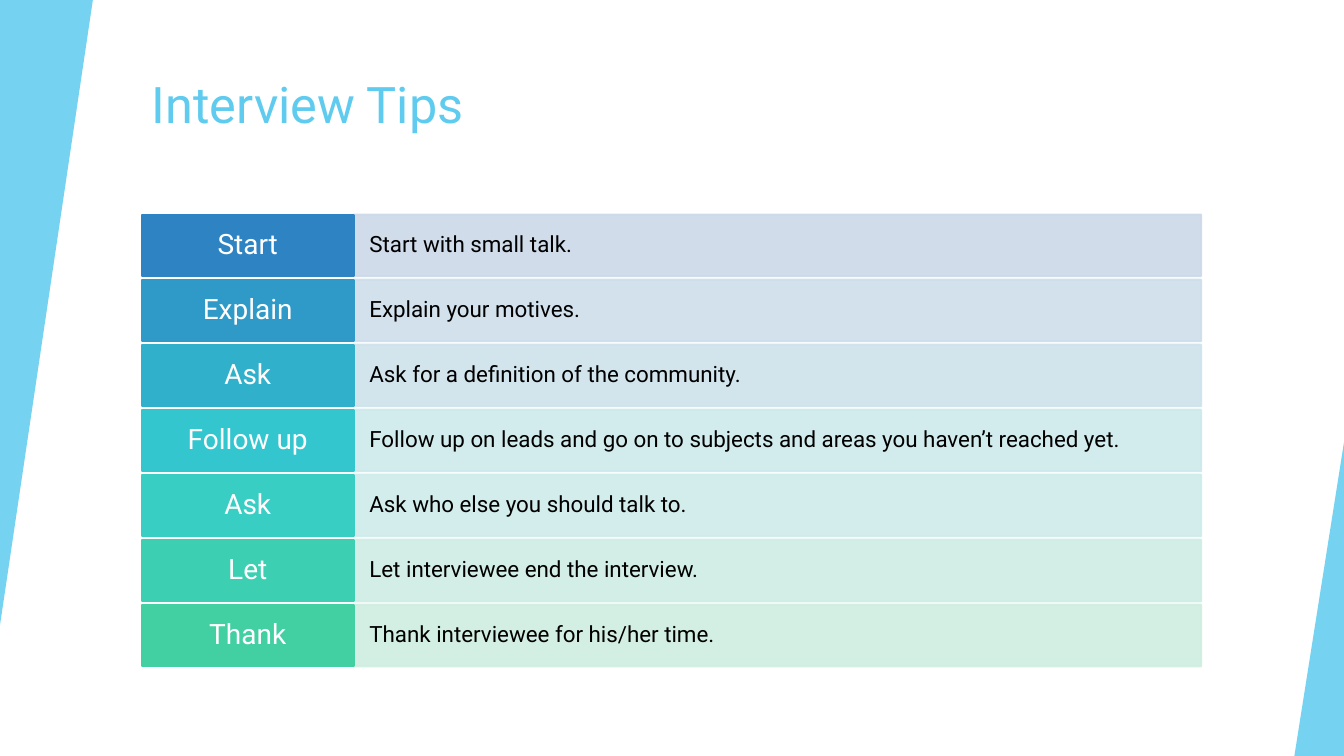
from lxml import etree
from pptx import Presentation
from pptx.dml.color import RGBColor
from pptx.enum.shapes import MSO_SHAPE
from pptx.enum.text import MSO_ANCHOR, PP_ALIGN
from pptx.oxml.ns import qn
from pptx.util import Cm, Pt

RECTANGLE, TRIANGLE = MSO_SHAPE.RECTANGLE, MSO_SHAPE.ISOSCELES_TRIANGLE
TOP, MIDDLE = MSO_ANCHOR.TOP, MSO_ANCHOR.MIDDLE
LEFT, CENTER = PP_ALIGN.LEFT, PP_ALIGN.CENTER

FONT = "Roboto"
SKY, WHITE, BLACK = "5FCBEF", "FFFFFF", "000000"
SLIDE_WIDTH, SLIDE_HEIGHT = 33.87, 19.05
TITLE_ONLY = 5

# Keyword, advice, keyword colour, advice colour
TIPS = [
    ("Start", "Start with small talk.", "2E83C3", "CDD9E9"),
    ("Explain", "Explain your motives.", "2F99C7", "CEDEEA"),
    ("Ask", "Ask for a definition of the community.", "31B0CB", "CEE3EB"),
    ("Follow up", "Follow up on leads and go on to subjects and areas "
     "you haven’t reached yet.", "34C6CE", "CEE9EC"),
    ("Ask", "Ask who else you should talk to.", "39CEC4", "CEECEA"),
    ("Let", "Let interviewee end the interview.", "3DCFB2", "CFEDE5"),
    ("Thank", "Thank interviewee for his/her time.", "42D0A2", "CFEEE0"),
]


def paint(color_format, color, opacity=100):
    """Set a solid fill or line fill, with its opacity in percent."""
    color_format.solid()
    color_format.fore_color.rgb = RGBColor.from_string(color)
    if opacity < 100:
        srgb = color_format._xPr.find(".//" + qn("a:srgbClr"))
        etree.SubElement(srgb, qn("a:alpha"), val=str(opacity * 1000))


def write(shape, text, size, color, align, anchor, inset_x, inset_y):
    frame = shape.text_frame
    frame.word_wrap = True
    frame.vertical_anchor = anchor
    frame.margin_left = frame.margin_right = Cm(inset_x)
    frame.margin_top = frame.margin_bottom = Cm(inset_y)
    paragraph = frame.paragraphs[0]
    paragraph.alignment = align
    paragraph.line_spacing = 0.9
    run = paragraph.add_run()
    run.text = text
    run.font.name = FONT
    run.font.size = Pt(size)
    paint(run.font.fill, color)


def add_block(slide, preset, box, color, opacity=100):
    shape = slide.shapes.add_shape(preset, *map(Cm, box))
    shape.shadow.inherit = False
    paint(shape.fill, color, opacity)
    return shape


def add_title(slide, box):
    title = slide.shapes.title
    title.left, title.top, title.width, title.height = map(Cm, box)
    write(title, "Interview Tips", 36, SKY, LEFT, TOP, 0.25, 0.13)
    title.text_frame.paragraphs[0].line_spacing = 1.0


def add_side_wedges(slide, box):
    left, top, width, height = box
    wedges = [
        ((left, top, 2.34, 15.75), 180),
        ((left + width - 1.25, top + height - 7.9, 1.25, 7.9), 0),
    ]
    for wedge_box, rotation in wedges:
        wedge = add_block(slide, TRIANGLE, wedge_box, SKY, 85)
        wedge.adjustments[0] = 1
        wedge.rotation = rotation
        wedge.line.fill.background()


def add_tips(slide, box):
    left, top, width, height = box
    row_height, keyword_width = 1.55, 5.33
    pitch = (height - row_height) / (len(TIPS) - 1)
    for index, (keyword, advice, strong, pale) in enumerate(TIPS):
        row_top = top + index * pitch
        # Advice bar
        bar_box = (left + keyword_width, row_top, width - keyword_width, row_height)
        bar = add_block(slide, RECTANGLE, bar_box, pale, 90)
        bar.line.width = Pt(1.5)
        paint(bar.line.fill, pale, 90)
        write(bar, advice, 16, BLACK, LEFT, MIDDLE, 0.4, 0.38)
        # Keyword cell
        cell_box = (left, row_top, keyword_width, row_height)
        cell = add_block(slide, RECTANGLE, cell_box, strong)
        cell.line.width = Pt(1.5)
        paint(cell.line.fill, strong)
        write(cell, keyword, 20, WHITE, CENTER, MIDDLE, 0.28, 0.15)


def main():
    prs = Presentation()
    prs.slide_width, prs.slide_height = Cm(SLIDE_WIDTH), Cm(SLIDE_HEIGHT)
    slide = prs.slides.add_slide(prs.slide_layouts[TITLE_ONLY])
    paint(slide.background.fill, WHITE)
    add_title(slide, (3.58, 1.7, 28.32, 3.05))
    add_side_wedges(slide, (0, 0, SLIDE_WIDTH, SLIDE_HEIGHT))
    add_tips(slide, (3.58, 5.41, 26.69, 11.38))
    prs.save("out.pptx")


if __name__ == "__main__":
    main()
